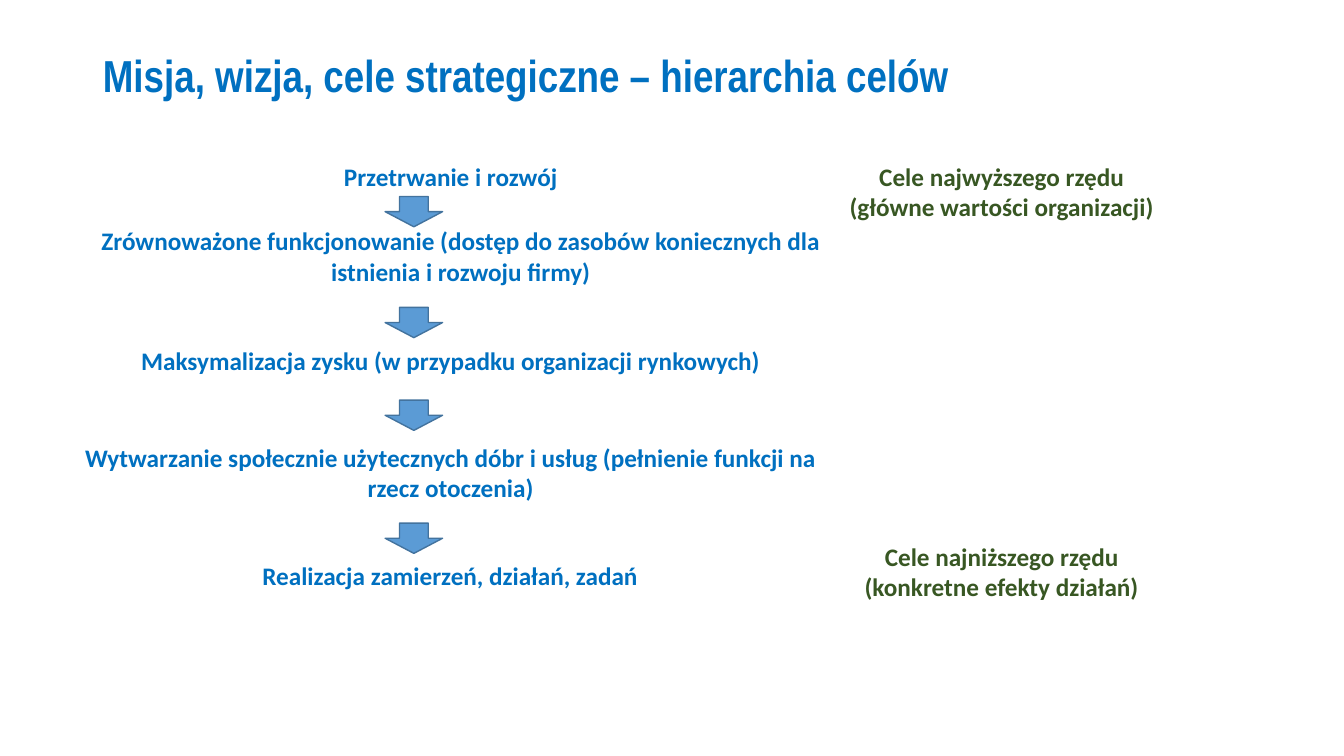
from dataclasses import dataclass

from pptx import Presentation
from pptx.dml.color import RGBColor
from pptx.enum import shapes, text
from pptx.util import Inches, Pt


@dataclass(frozen=True)
class Theme:
    title_font: str = "Arial Narrow"
    body_font: str = "Calibri"
    title_size: int = 32
    body_size: int = 18
    goal: str = "0070C0"
    rank: str = "385723"
    arrow_fill: str = "5B9BD5"
    arrow_line: str = "43739E"


def write(frame, content, *, font, size, color, align, anchor, spacing=None):
    """Fill a text frame in bold, one paragraph per line of content."""
    frame.word_wrap = True
    frame.vertical_anchor = anchor
    frame.text = content
    for paragraph in frame.paragraphs:
        paragraph.alignment = align
        if spacing:
            paragraph.line_spacing = spacing
        for run in paragraph.runs:
            run.font.name = font
            run.font.size = Pt(size)
            run.font.bold = True
            run.font.color.rgb = RGBColor.from_string(color)


class GoalSlide:
    def __init__(self, deck, theme):
        self.theme = theme
        self.slide = deck.slides.add_slide(deck.slide_layouts[5])

    def title(self, content, left, top, width, height):
        heading = self.slide.shapes.title
        heading.left, heading.top = Inches(left), Inches(top)
        heading.width, heading.height = Inches(width), Inches(height)
        write(heading.text_frame, content, font=self.theme.title_font,
              size=self.theme.title_size, color=self.theme.goal,
              align=text.PP_ALIGN.LEFT, anchor=text.MSO_ANCHOR.MIDDLE, spacing=0.9)
        heading.text_frame.auto_size = text.MSO_AUTO_SIZE.NONE

    def label(self, content, left, top, width, height, color):
        label = self.slide.shapes.add_textbox(
            Inches(left), Inches(top), Inches(width), Inches(height))
        write(label.text_frame, content, font=self.theme.body_font,
              size=self.theme.body_size, color=color,
              align=text.PP_ALIGN.CENTER, anchor=text.MSO_ANCHOR.TOP)
        label.text_frame.auto_size = text.MSO_AUTO_SIZE.SHAPE_TO_FIT_TEXT

    def down_arrow(self, left, top, width, height):
        arrow = self.slide.shapes.add_shape(
            shapes.MSO_SHAPE.DOWN_ARROW,
            Inches(left), Inches(top), Inches(width), Inches(height))
        arrow.shadow.inherit = False
        arrow.fill.solid()
        arrow.fill.fore_color.rgb = RGBColor.from_string(self.theme.arrow_fill)
        arrow.line.color.rgb = RGBColor.from_string(self.theme.arrow_line)
        arrow.line.width = Pt(1)


ONE_LINE, TWO_LINES = 0.4, 0.71

GOALS = [
    ("Przetrwanie i rozwój", 0.74, 1.55, 7.46, ONE_LINE),
    ("Zrównoważone funkcjonowanie (dostęp do zasobów koniecznych dla "
     "istnienia i rozwoju firmy)", 0.74, 2.19, 7.66, TWO_LINES),
    ("Maksymalizacja zysku (w przypadku organizacji rynkowych)",
     0.74, 3.38, 7.46, ONE_LINE),
    ("Wytwarzanie społecznie użytecznych dóbr i usług (pełnienie funkcji na "
     "rzecz otoczenia)", 0.74, 4.34, 7.46, TWO_LINES),
    ("Realizacja zamierzeń, działań, zadań", 0.89, 5.51, 7.15, ONE_LINE),
]
RANKS = [
    ("Cele najwyższego rzędu\n(główne wartości organizacji)", 1.55),
    ("Cele najniższego rzędu\n(konkretne efekty działań)", 5.32),
]
ARROW_TOPS = [1.95, 3.05, 3.97, 5.19]


def main():
    deck = Presentation()
    deck.slide_width, deck.slide_height = Inches(13.33), Inches(7.5)
    theme = Theme()
    hierarchy = GoalSlide(deck, theme)
    hierarchy.title("Misja, wizja, cele strategiczne – hierarchia celów",
                    0.92, 0.4, 11.5, 0.75)
    for goal in GOALS:
        hierarchy.label(*goal, color=theme.goal)
    for rank, top in RANKS:
        hierarchy.label(rank, 7.92, top, 4.03, TWO_LINES, color=theme.rank)
    for top in ARROW_TOPS:
        hierarchy.down_arrow(3.82, top, 0.57, 0.3)
    deck.save("out.pptx")


if __name__ == "__main__":
    main()
